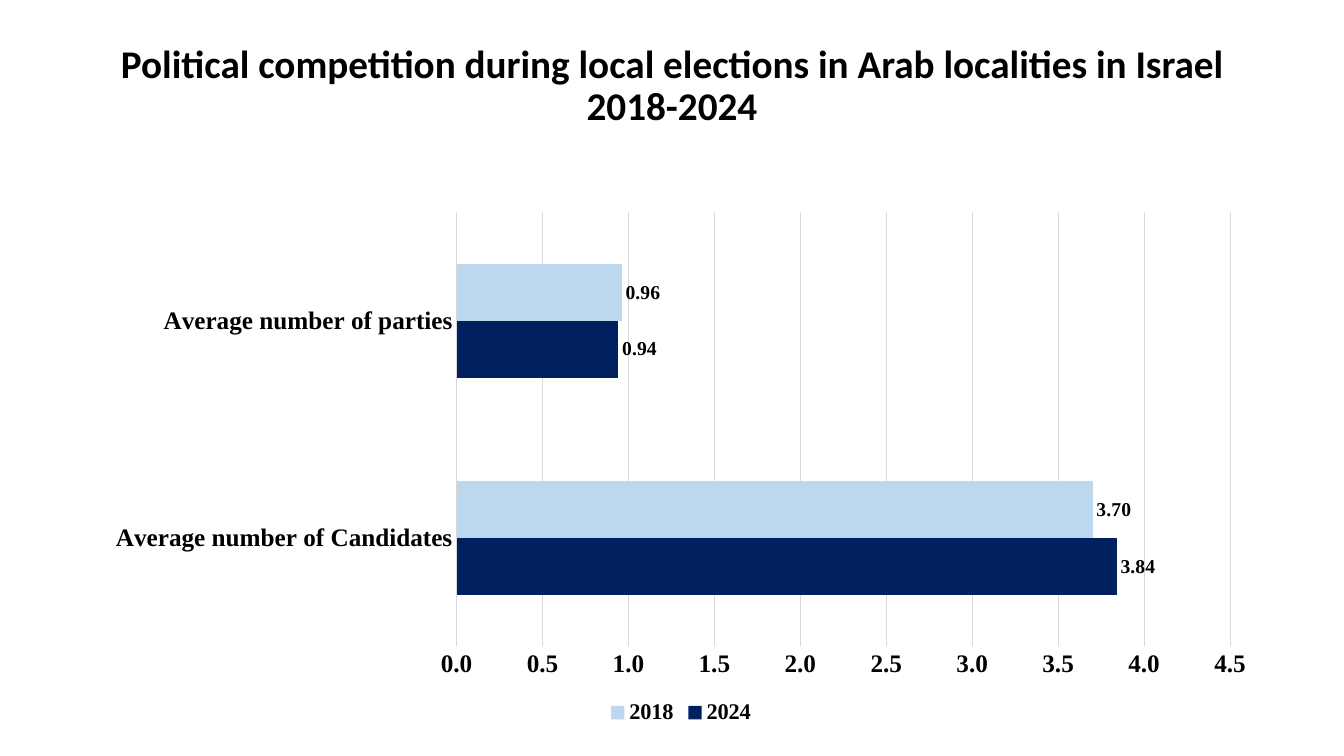
from dataclasses import dataclass
from typing import Any

from pptx import Presentation
from pptx.chart.data import CategoryChartData as Data
from pptx.dml.color import RGBColor
from pptx.enum.chart import XL_CHART_TYPE as Kind
from pptx.enum.chart import XL_LABEL_POSITION as Spot
from pptx.enum.chart import XL_LEGEND_POSITION as Side
from pptx.enum.chart import XL_TICK_MARK as Tick
from pptx.enum.text import MSO_ANCHOR as Anchor
from pptx.enum.text import PP_ALIGN as Align
from pptx.util import Pt

PX = 9525
BLACK = RGBColor(0x00, 0x00, 0x00)
NAVY = RGBColor(0x00, 0x20, 0x60)
SKY = RGBColor(0xBD, 0xD7, 0xEE)
GREY = RGBColor(0xD9, 0xD9, 0xD9)
SERIF = "Times New Roman"
TITLE = "Political competition during local elections in Arab localities in Israel 2018-2024"
GROUPS = ["Average number of Candidates", "Average number of parties"]


@dataclass(frozen=True)
class Box:
    left: int
    top: int
    width: int
    height: int

    def emu(self) -> list[int]:
        return [n * PX for n in (self.left, self.top, self.width, self.height)]


@dataclass(frozen=True)
class Year:
    name: str
    values: tuple[float, ...]
    color: RGBColor


YEARS = [Year("2024", (3.84, 0.94), NAVY), Year("2018", (3.70, 0.96), SKY)]


def apply(item: Any, style: dict[str, Any]) -> None:
    for key, value in style.items():
        setattr(item, key, value)


def set_font(font: Any, size: int, name: str = SERIF) -> None:
    apply(font, {"size": Pt(size), "name": name, "bold": True})
    font.color.rgb = BLACK


def set_line(line: Any) -> None:
    line.color.rgb = GREY
    line.width = Pt(0.75)


def add_title(slide: Any, box: Box) -> None:
    frame = slide.shapes.add_textbox(*box.emu()).text_frame
    apply(frame, {"word_wrap": True, "vertical_anchor": Anchor.MIDDLE})
    para = frame.paragraphs[0]
    apply(para, {"text": TITLE, "alignment": Align.CENTER, "line_spacing": 0.9})
    set_font(para.runs[0].font, 28, "Calibri")


def style_year(series: Any, year: Year) -> None:
    series.format.fill.solid()
    series.format.fill.fore_color.rgb = year.color
    labels = series.data_labels
    apply(labels, {
        "show_value": True,
        "number_format": "0.00",
        "number_format_is_linked": False,
        "position": Spot.OUTSIDE_END,
    })
    set_font(labels.font, 14)


def style_axes(chart: Any) -> None:
    for axis in (chart.category_axis, chart.value_axis):
        apply(axis, {"major_tick_mark": Tick.NONE, "minor_tick_mark": Tick.NONE})
        set_font(axis.tick_labels.font, 18)
    set_line(chart.category_axis.format.line)
    scale = chart.value_axis
    apply(scale, {
        "minimum_scale": 0,
        "maximum_scale": 4.5,
        "major_unit": 0.5,
        "has_major_gridlines": True,
    })
    apply(scale.tick_labels, {"number_format": "0.0", "number_format_is_linked": False})
    scale.format.line.fill.background()
    set_line(scale.major_gridlines.format.line)


def add_bars(slide: Any, box: Box) -> None:
    data = Data(number_format="0.00")
    data.categories = GROUPS
    for year in YEARS:
        data.add_series(year.name, year.values)
    chart = slide.shapes.add_chart(Kind.BAR_CLUSTERED, *box.emu(), data).chart
    apply(chart, {"has_title": False, "has_legend": True})
    set_font(chart.font, 10)
    apply(chart.legend, {"position": Side.BOTTOM, "include_in_layout": False})
    set_font(chart.legend.font, 16)
    plot = chart.plots[0]
    apply(plot, {"gap_width": 182, "overlap": 0, "vary_by_categories": False})
    for series, year in zip(plot.series, YEARS):
        style_year(series, year)
    style_axes(chart)


def main() -> None:
    deck = Presentation()
    apply(deck, {"slide_width": 1280 * PX, "slide_height": 720 * PX})
    slide = deck.slides.add_slide(deck.slide_layouts[6])
    add_title(slide, Box(88, 13, 1104, 139))
    add_bars(slide, Box(88, 192, 1121, 503))
    deck.save("out.pptx")


if __name__ == "__main__":
    main()
